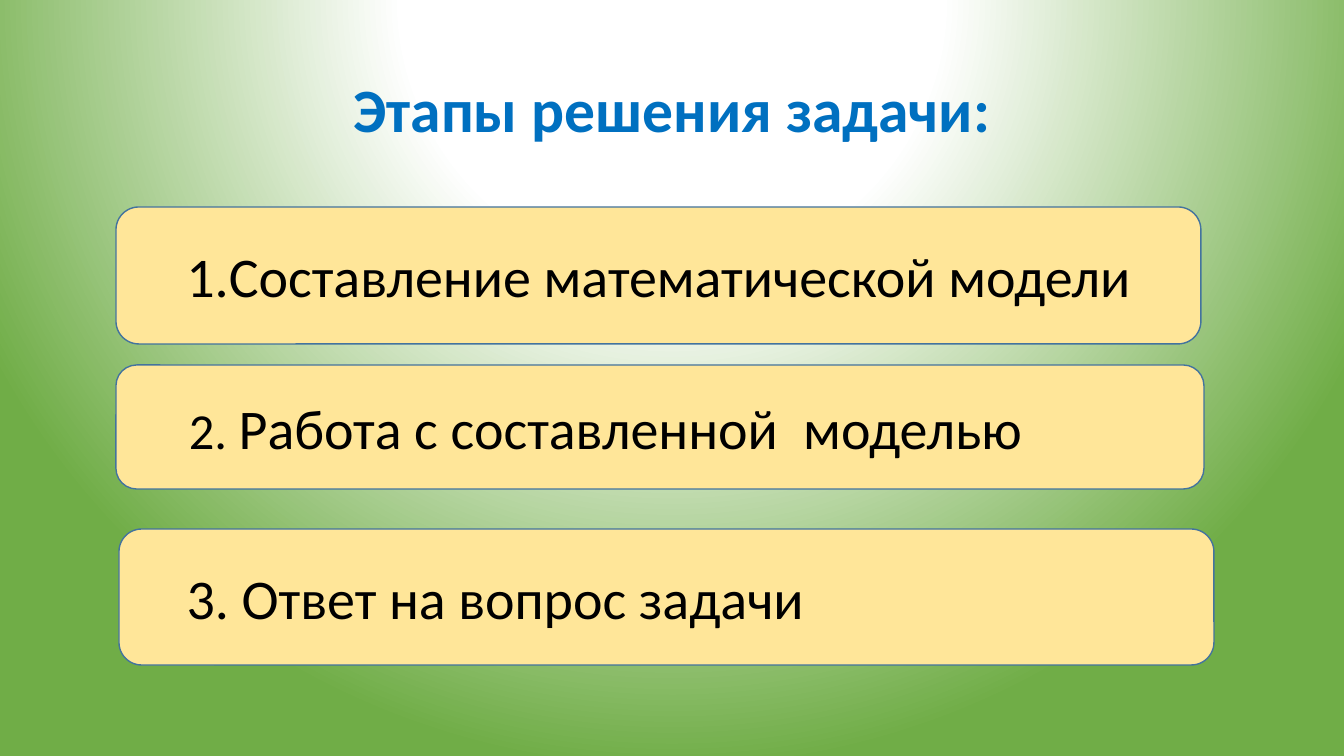
from pptx import Presentation
from pptx.dml.color import RGBColor
from pptx.enum.shapes import MSO_SHAPE
from pptx.enum.text import MSO_ANCHOR, PP_ALIGN
from pptx.oxml import parse_xml
from pptx.oxml.ns import nsdecls
from pptx.util import Emu, Pt

PX = 914400 / 100.8
FONT = "Calibri"
BLACK, BLUE, CREAM, OUTLINE = "000000", "0070C0", "FFE699", "43739E"

TITLE = "Этапы решения задачи:"
TITLE_BOX = (93, 40, 1159, 146)

# box in px, left inset in px, alignment, runs as (text, size)
STAGES = [
    ((116, 207, 1085, 137), 10, PP_ALIGN.CENTER,
     [("1.Составление математической модели", 40)]),
    ((116, 365, 1088, 124), 67, PP_ALIGN.LEFT,
     [("2. ", 36), ("Работа с составленной  моделью", 40)]),
    ((119, 529, 1095, 136), 61, PP_ALIGN.LEFT,
     [("3. Ответ на вопрос задачи", 40)]),
]
GRADIENT_STOPS = [(0, "FFFFFF"), (35, "FFFFFF"), (100, "70AD47")]


def px(length):
    return Emu(round(length * PX))


def color(hex_value):
    return RGBColor.from_string(hex_value)


def format_run(run, size, hex_value, bold=False):
    run.font.name = FONT
    run.font.size = Pt(size)
    run.font.bold = bold
    run.font.color.rgb = color(hex_value)


def set_background(slide):
    """Fill the background with a circular gradient centred above the slide."""
    stops = "".join(
        f'<a:gs pos="{percent * 1000}"><a:srgbClr val="{hex_value}"/></a:gs>'
        for percent, hex_value in GRADIENT_STOPS)
    gradient = parse_xml(
        f'<a:gradFill {nsdecls("a")} rotWithShape="1"><a:gsLst>{stops}</a:gsLst>'
        '<a:path path="circle"><a:fillToRect l="50000" t="-80000" r="50000" b="180000"/>'
        '</a:path></a:gradFill>')
    slide.background.fill.solid()
    solid = slide.background._cSld.bg.bgPr[0]
    solid.getparent().replace(solid, gradient)


def add_title(slide):
    title = slide.shapes.title
    title.left, title.top, title.width, title.height = map(px, TITLE_BOX)
    frame = title.text_frame
    frame.text = TITLE
    frame.vertical_anchor = MSO_ANCHOR.MIDDLE
    paragraph = frame.paragraphs[0]
    paragraph.alignment = PP_ALIGN.CENTER
    paragraph.line_spacing = 0.9
    format_run(paragraph.runs[0], 44, BLUE, bold=True)


def add_stage(slide, box, inset, alignment, runs):
    shape = slide.shapes.add_shape(MSO_SHAPE.ROUNDED_RECTANGLE, *map(px, box))
    shape.shadow.inherit = False
    shape.fill.solid()
    shape.fill.fore_color.rgb = color(CREAM)
    shape.line.color.rgb = color(OUTLINE)
    shape.line.width = Pt(1)
    frame = shape.text_frame
    frame.word_wrap = True
    frame.vertical_anchor = MSO_ANCHOR.MIDDLE
    frame.margin_left = px(inset)
    paragraph = frame.paragraphs[0]
    paragraph.alignment = alignment
    for text, size in runs:
        run = paragraph.add_run()
        run.text = text
        format_run(run, size, BLACK)


def main():
    presentation = Presentation()
    presentation.slide_width, presentation.slide_height = px(1344), px(756)
    slide = presentation.slides.add_slide(presentation.slide_layouts[5])
    set_background(slide)
    add_title(slide)
    for stage in STAGES:
        add_stage(slide, *stage)
    presentation.save("out.pptx")


if __name__ == "__main__":
    main()
